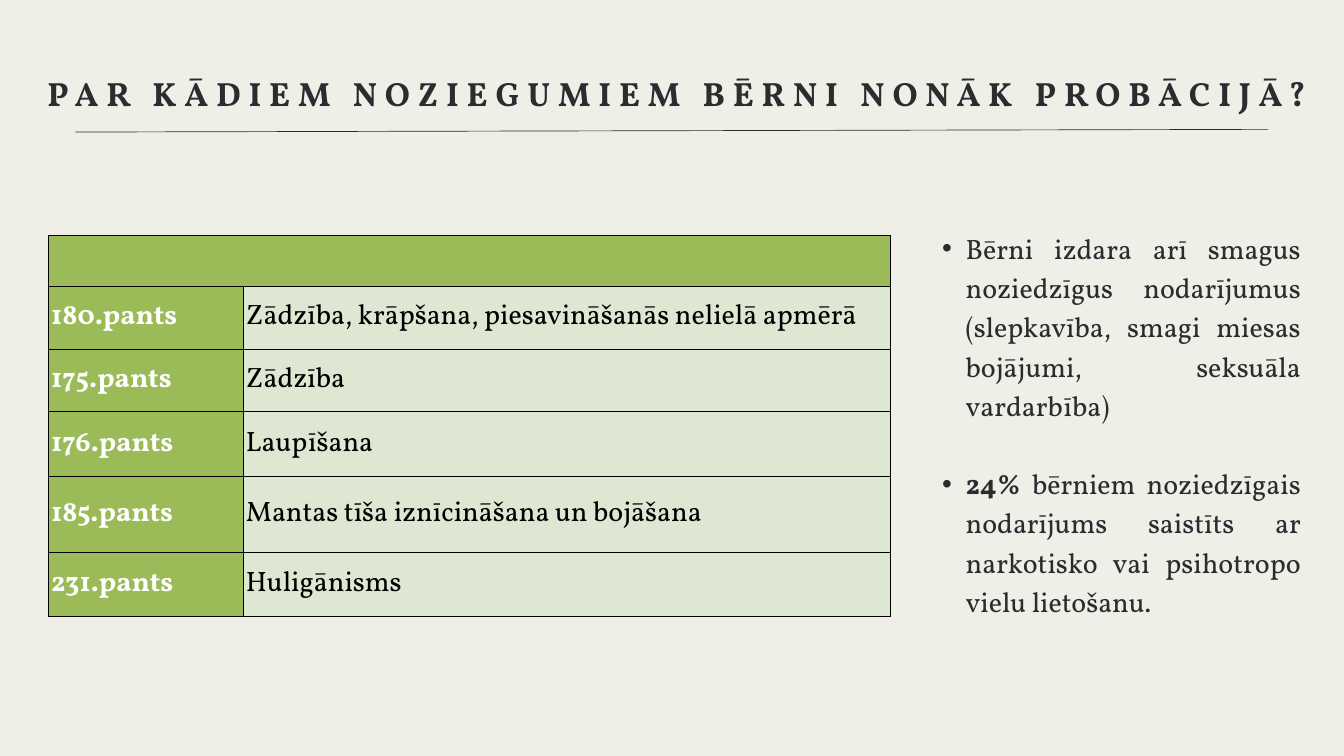
from dataclasses import dataclass

from lxml.etree import SubElement
from pptx import Presentation
from pptx.dml.color import RGBColor as Rgb
from pptx.enum.text import MSO_ANCHOR as Anchor, MSO_AUTO_SIZE as Fit, PP_ALIGN as Align
from pptx.oxml.ns import qn
from pptx.util import Inches, Pt


@dataclass(frozen=True)
class Theme:
    face: str = "Vollkorn"
    back: str = "EFEEE7"
    ink: str = "2B2C30"
    green: str = "9BBB59"
    pale: str = "DEE7D1"
    white: str = "FFFFFF"
    black: str = "000000"
    head: int = 36
    body: int = 30
    lead: int = 42
    edge: float = 0.37


THEME = Theme()

TITLE = "PAR KĀDIEM NOZIEGUMIEM BĒRNI NONĀK PROBĀCIJĀ?"
CRIMES = [
    ("180.pants", "Zādzība, krāpšana, piesavināšanās nelielā apmērā", 0.93),
    ("175.pants", "Zādzība", 0.93),
    ("176.pants", "Laupīšana", 0.97),
    ("185.pants", "Mantas tīša iznīcināšana un bojāšana", 1.12),
    ("231.pants", "Huligānisms", 0.96),
]
NOTES = [
    [("Bērni izdara arī smagus noziedzīgus nodarījumus "
      "(slepkavība, smagi miesas bojājumi, seksuāla vardarbība)", False)],
    [("24%", True),
     (" bērniem noziedzīgais nodarījums saistīts ar narkotisko "
      "vai psihotropo vielu lietošanu.", False)],
]


def paint(fill, color):
    fill.solid()
    fill.fore_color.rgb = Rgb.from_string(color)


def style(para, size, color, lead, align, bold=None):
    font = para.font
    font.name, font.size, font.bold = THEME.face, Pt(size), bold
    font.color.rgb = Rgb.from_string(color)
    para.alignment = align
    para.line_spacing = Pt(lead)
    para.space_before = Pt(0)


def place(shape, box):
    shape.left, shape.top, shape.width, shape.height = map(Inches, box)
    frame = shape.text_frame
    frame.margin_left = frame.margin_right = 0
    frame.margin_top = frame.margin_bottom = 0
    frame.word_wrap = True
    frame.auto_size = Fit.NONE
    frame.vertical_anchor = Anchor.TOP
    return frame


def add_title(slide, box):
    frame = place(slide.shapes.title, box)
    frame.text = TITLE
    para = frame.paragraphs[0]
    style(para, THEME.head, THEME.ink, 52, Align.CENTER, True)
    para.runs[0].font._element.set("spc", "840")


def add_rule(slide, box):
    left, top, wide, high = box
    thick = 0.01
    right, base = left + wide, top + high
    spots = [(left, base - thick), (right, top), (right, top + thick), (left, base)]
    spots = [(Inches(x), Inches(y)) for x, y in spots]
    path = slide.shapes.build_freeform(*spots[0])
    path.add_line_segments(spots[1:], close=True)
    rule = path.convert_to_shape()
    paint(rule.fill, THEME.ink)
    rule.line.fill.background()
    rule.shadow.inherit = False


def dress(cell, color):
    props = cell._tc.get_or_add_tcPr()
    for side in ("a:lnL", "a:lnR", "a:lnT", "a:lnB"):
        line = SubElement(props, qn(side), w=str(Pt(THEME.edge)))
        fill = SubElement(line, qn("a:solidFill"))
        SubElement(fill, qn("a:srgbClr"), val=THEME.black)
    paint(cell.fill, color)


def add_crimes(slide, box):
    high = [0.76] + [row[-1] for row in CRIMES]
    table = slide.shapes.add_table(len(high), 2, *map(Inches, box)).table
    table.first_row = table.horz_banding = False
    for col, wide in zip(table.columns, (2.9, box[2] - 2.9)):
        col.width = Inches(wide)
    for row, size in zip(table.rows, high):
        row.height = Inches(size)
    for cell in table.rows[0].cells:
        dress(cell, THEME.green)
    table.cell(0, 0).merge(table.cell(0, 1))

    looks = [(THEME.green, THEME.white, True), (THEME.pale, THEME.black, False)]
    for i, crime in enumerate(CRIMES, 1):
        for j, (fill, color, bold) in enumerate(looks):
            cell = table.cell(i, j)
            cell.text = crime[j]
            cell.vertical_anchor = Anchor.MIDDLE
            cell.margin_left = cell.margin_right = Inches(0.04)
            cell.margin_top = cell.margin_bottom = Inches(0.04)
            style(cell.text_frame.paragraphs[0], THEME.body, color,
                  THEME.lead, Align.JUSTIFY, bold)
            dress(cell, fill)


def add_notes(slide, box):
    frame = place(slide.placeholders[1], box)
    for i, note in enumerate(NOTES):
        para = frame.add_paragraph() if i else frame.paragraphs[0]
        style(para, THEME.body, THEME.ink, THEME.lead, Align.JUSTIFY)
        para.space_before = Pt(THEME.lead * i)
        props = para._p.get_or_add_pPr()
        props.set("marL", str(Inches(0.71)))
        props.set("indent", str(Inches(-0.35)))
        for text, bold in note:
            run = para.add_run()
            run.text = text
            run.font.bold = bold


def main():
    deck = Presentation()
    deck.slide_width, deck.slide_height = Inches(20), Inches(11.25)
    slide = deck.slides.add_slide(deck.slide_layouts[1])
    paint(slide.background.fill, THEME.back)
    add_rule(slide, (1.12, 1.92, 17.75, 0.05))
    add_title(slide, (0.43, 0.96, 19.3, 0.75))
    add_crimes(slide, (0.72, 3.5, 12.53, 5.67))
    add_notes(slide, (13.66, 3.36, 5.7, 5.81))
    deck.save("out.pptx")


if __name__ == "__main__":
    main()
